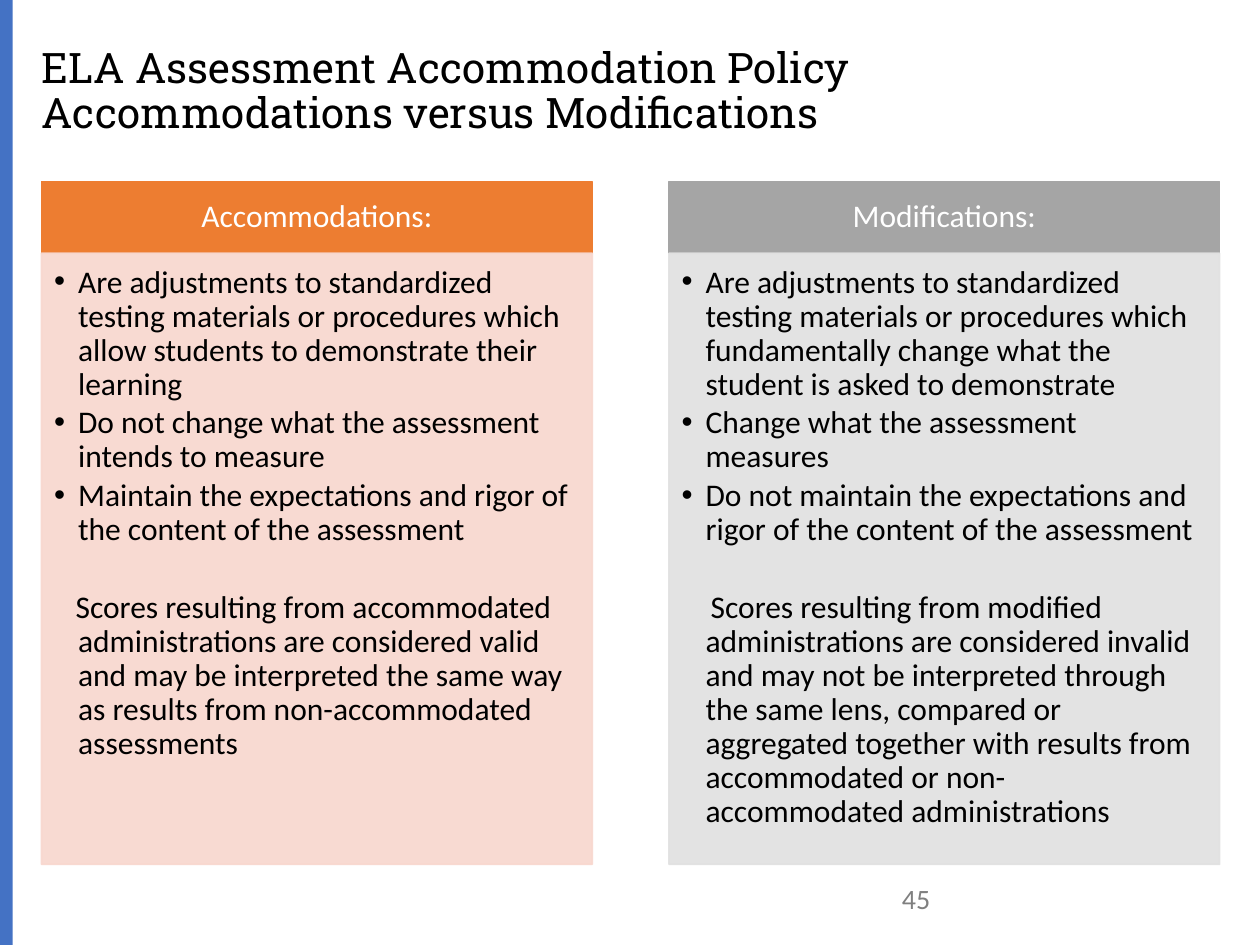
from dataclasses import dataclass

from lxml.etree import SubElement
from pptx import Presentation
from pptx.dml.color import RGBColor
from pptx.enum.shapes import MSO_SHAPE
from pptx.enum.text import MSO_ANCHOR, MSO_AUTO_SIZE, PP_ALIGN
from pptx.oxml.ns import qn
from pptx.util import Inches, Pt


@dataclass(frozen=True)
class Theme:
    title_font: str = "Roboto Slab"
    body_font: str = "Calibri"
    title_size: int = 24
    body_size: int = 18
    number_size: int = 16
    text: str = "000000"
    header_text: str = "FFFFFF"
    number: str = "808080"
    stripe: str = "4472C4"
    orange: str = "ED7D31"
    peach: str = "F8D7CE"
    gray: str = "A5A5A5"
    silver: str = "E1E1E1"


THEME = Theme()
LINE_SPACING = 0.9
HEADER_HEIGHT = 0.57
HANGING = 0.19

COLUMNS = [
    {
        "heading": "Accommodations:",
        "colors": (THEME.orange, THEME.peach),
        "bullets": [
            "Are adjustments to standardized testing materials or procedures which allow students to demonstrate their learning",
            "Do not change what the assessment intends to measure",
            "Maintain the expectations and rigor of the content of the assessment",
        ],
        "scores": "Scores resulting from accommodated administrations are considered valid and may be interpreted the same way as results from non-accommodated assessments",
        "scores_indent": -0.02,
    },
    {
        "heading": "Modifications:",
        "colors": (THEME.gray, THEME.silver),
        "bullets": [
            "Are adjustments to standardized testing materials or procedures which fundamentally change what the student is asked to demonstrate",
            "Change what the assessment measures",
            "Do not maintain the expectations and rigor of the content of the assessment",
        ],
        "scores": "Scores resulting from modified administrations are considered invalid and may not be interpreted through the same lens, compared or aggregated together with results from accommodated or non-accommodated administrations",
        "scores_indent": 0.04,
    },
]


def place(shape, box):
    shape.left, shape.top, shape.width, shape.height = map(Inches, box)


def paint(shape, color, opacity=100):
    shape.fill.solid()
    shape.line.width = Pt(1)
    shape.line.fill.solid()
    for fill in (shape.fill, shape.line.fill):
        fill.fore_color.rgb = RGBColor.from_string(color)
    if opacity < 100:
        for color_element in shape.element.spPr.iter(qn("a:srgbClr")):
            SubElement(color_element, qn("a:alpha"), val=str(opacity * 1000))


def set_frame(shape, margins, anchor):
    frame = shape.text_frame
    frame.word_wrap = True
    frame.auto_size = MSO_AUTO_SIZE.NONE
    frame.vertical_anchor = anchor
    frame.margin_left, frame.margin_top, frame.margin_right, frame.margin_bottom = map(Inches, margins)
    return frame


def add_span(para, text, size, color, font=THEME.body_font):
    span = para.add_run()
    span.text = text
    span.font.name = font
    span.font.size = Pt(size)
    span.font.bold = False
    span.font.color.rgb = RGBColor.from_string(color)


def set_spacing(para, before=0, after=0):
    para.line_spacing = LINE_SPACING
    para.space_before = Pt(before)
    para.space_after = Pt(after)


def set_indent(para, first_line, bullet=None):
    properties = para._p.get_or_add_pPr()
    properties.set("marL", str(Inches(HANGING)))
    properties.set("indent", str(Inches(first_line)))
    if bullet:
        SubElement(properties, qn("a:buFont"), typeface="Arial")
        SubElement(properties, qn("a:buChar"), char=bullet)
    else:
        SubElement(properties, qn("a:buNone"))


def fill_title(title, box):
    place(title, box)
    frame = set_frame(title, (0, 0, 0, 0), MSO_ANCHOR.MIDDLE)
    para = frame.paragraphs[0]
    para.alignment = PP_ALIGN.LEFT
    set_spacing(para)
    add_span(para, "ELA Assessment Accommodation Policy", THEME.title_size, THEME.text, THEME.title_font)
    para.add_line_break()
    add_span(para, "Accommodations versus Modifications", THEME.title_size, THEME.text, THEME.title_font)


def add_stripe(page, box):
    stripe = page.shapes.add_shape(MSO_SHAPE.RECTANGLE, *map(Inches, box))
    stripe.shadow.inherit = False
    stripe.fill.solid()
    stripe.fill.fore_color.rgb = RGBColor.from_string(THEME.stripe)
    stripe.line.fill.background()


def add_page_number(page, box):
    number = page.shapes.add_textbox(*map(Inches, box))
    frame = set_frame(number, (0.1, 0.05, 0.1, 0.05), MSO_ANCHOR.TOP)
    add_span(frame.paragraphs[0], "45", THEME.number_size, THEME.number)


def fill_column(header, body, column, box):
    left, top, width, height = box
    header_color, body_color = column["colors"]

    place(header, (left, top, width, HEADER_HEIGHT))
    paint(header, header_color)
    para = set_frame(header, (0.14, 0.08, 0.14, 0.08), MSO_ANCHOR.MIDDLE).paragraphs[0]
    para.alignment = PP_ALIGN.CENTER
    set_spacing(para)
    add_span(para, column["heading"], THEME.body_size, THEME.header_text)

    place(body, (left, top + HEADER_HEIGHT, width, height - HEADER_HEIGHT))
    paint(body, body_color, opacity=90)
    frame = set_frame(body, (0.1, 0.1, 0.14, 0.16), MSO_ANCHOR.TOP)
    for index, text in enumerate(column["bullets"]):
        para = frame.add_paragraph() if index else frame.paragraphs[0]
        para.level = 1
        set_indent(para, -HANGING, "•")
        set_spacing(para, after=2.7)
        add_span(para, text, THEME.body_size, THEME.text)
    para = frame.add_paragraph()
    para.level = 1
    set_indent(para, column["scores_indent"])
    set_spacing(para, before=22.4, after=2.7)
    add_span(para, column["scores"], THEME.body_size, THEME.text)


def main():
    deck = Presentation()
    deck.slide_width, deck.slide_height = Inches(10), Inches(7.5)
    page = deck.slides.add_slide(deck.slide_layouts.get_by_name("Comparison"))
    holders = page.placeholders
    fill_title(page.shapes.title, (0.33, 0.35, 9.36, 0.77))
    add_stripe(page, (0, 0, 0.1, 7.5))
    add_page_number(page, (7.06, 6.95, 2.25, 0.4))
    for index, column in enumerate(COLUMNS):
        header, body = holders[1 + 2 * index], holders[2 + 2 * index]
        fill_column(header, body, column, (0.33 + 4.98 * index, 1.44, 4.37, 5.42))
    deck.save("out.pptx")


if __name__ == "__main__":
    main()
